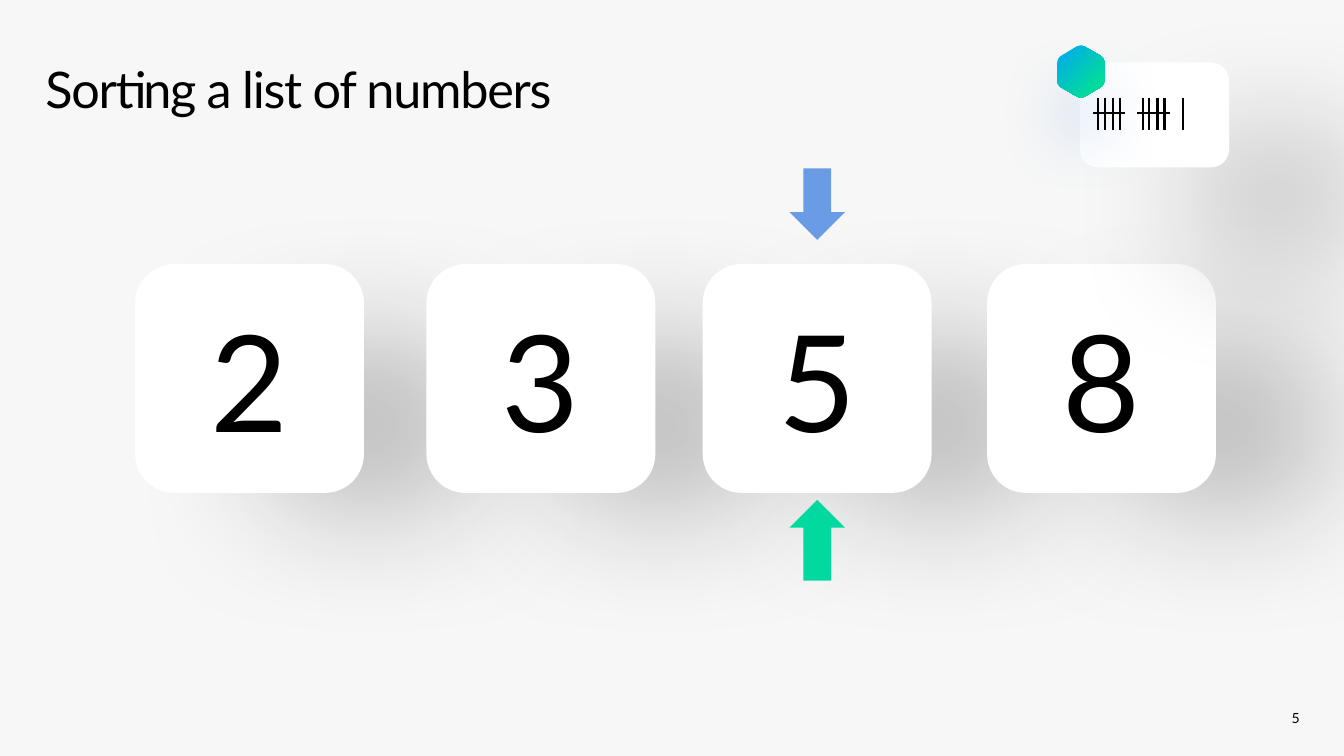
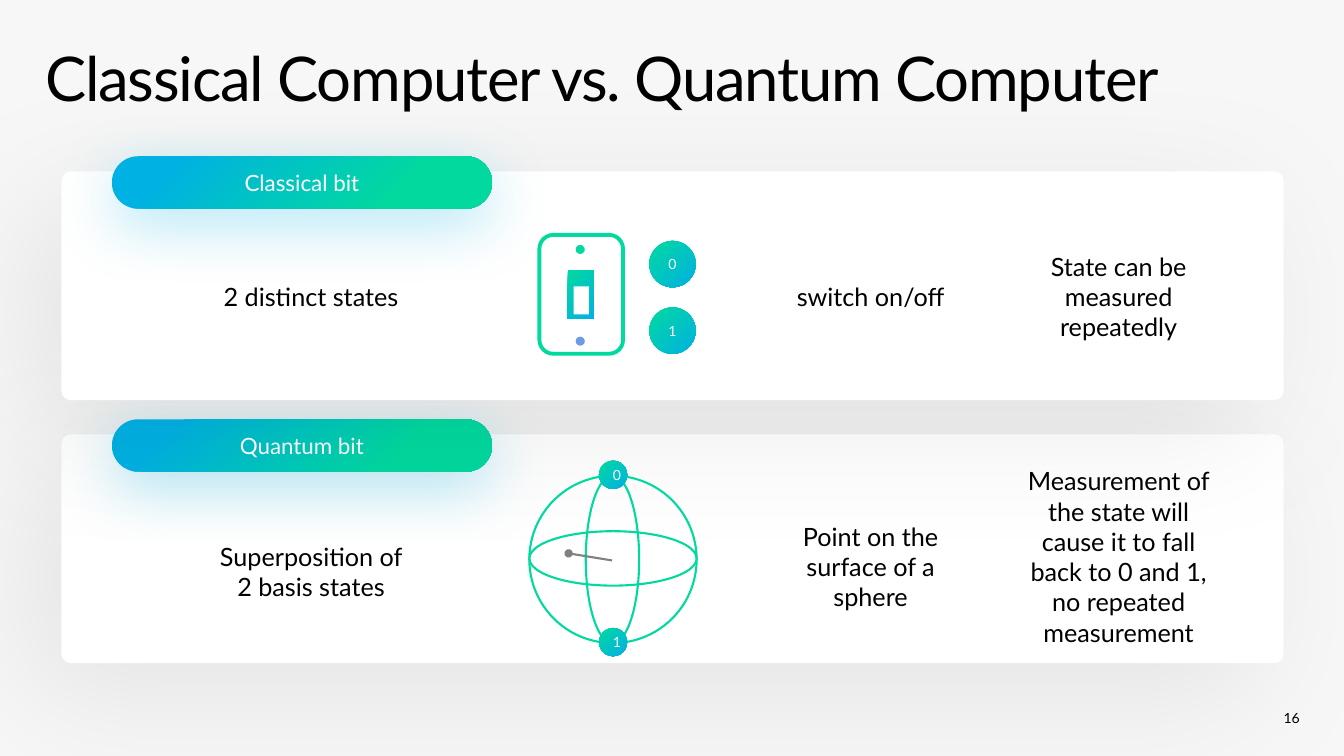
"""Build two slides: sorting a list of numbers, and classical versus quantum bits."""
import math

import lxml.etree
import pptx
import pptx.dml.color
import pptx.enum.shapes
import pptx.enum.text
import pptx.oxml.ns
import pptx.util

Inches = pptx.util.Inches
Pt = pptx.util.Pt
RGBColor = pptx.dml.color.RGBColor
Shape = pptx.enum.shapes.MSO_SHAPE
Align = pptx.enum.text.PP_ALIGN
Anchor = pptx.enum.text.MSO_ANCHOR
qn = pptx.oxml.ns.qn

BLACK = RGBColor(0x00, 0x00, 0x00)
NEAR_BLACK = RGBColor(0x0D, 0x0D, 0x0D)
WHITE = RGBColor(0xFF, 0xFF, 0xFF)
PAGE = RGBColor(0xF7, 0xF7, 0xF7)
GREY = RGBColor(0x80, 0x80, 0x80)
GREEN = RGBColor(0x02, 0xD9, 0x9F)
CYAN = RGBColor(0x00, 0xB1, 0xE3)
BLUE = RGBColor(0x69, 0x9C, 0xE5)
FONT = "Lato"

BADGE_GRADIENT = ((0.15, CYAN), (0.75, GREEN))
STATE_GRADIENT = ((0, GREEN), (1, CYAN))

NUMBER_SHADOW = (NEAR_BLACK, 27, 100, 104, 34)
PANEL_SHADOW = (BLACK, 8, 100, 31, 135)
PILL_SHADOW = (CYAN, 30, 45, 12, 90)
HEXAGON_SHADOW = (BLUE, 30, 45, 30, 90)


def add_block(slide, kind, box, fill=None, text="", size=18, color=BLACK, align=Align.CENTER,
              anchor=Anchor.MIDDLE, shadow=None, corner=None, outline=None, outline_width=1.5):
    """Add a preset shape, an outline from points, or a text box when kind is None."""
    if kind is None:
        shape = slide.shapes.add_textbox(*map(Inches, box))
    elif isinstance(kind, list):
        points = [(Inches(x), Inches(y)) for x, y in kind]
        builder = slide.shapes.build_freeform(*points[0])
        builder.add_line_segments(points[1:])
        shape = builder.convert_to_shape()
    else:
        shape = slide.shapes.add_shape(kind, *map(Inches, box))
    if kind is not None:
        shape.shadow.inherit = False
        if fill is None:
            shape.fill.background()
        elif isinstance(fill, RGBColor):
            shape.fill.solid()
            shape.fill.fore_color.rgb = fill
        else:
            shape.fill.gradient()
            shape.fill.gradient_angle = 315
            for stop, (position, stop_color) in zip(shape.fill.gradient_stops, fill):
                stop.position = position
                stop.color.rgb = stop_color
        if outline is None:
            shape.line.fill.background()
        else:
            shape.line.color.rgb = outline
            shape.line.width = Pt(outline_width)
    if corner is not None:
        shape.adjustments[0] = corner
    if shadow:
        shadow_color, opacity, blur, distance, angle = shadow
        effects = shape._element.spPr.find(qn("a:effectLst"))
        outer = lxml.etree.SubElement(
            effects, qn("a:outerShdw"), blurRad=str(int(Pt(blur))), dist=str(int(Pt(distance))),
            dir=str(angle * 60000), algn="ctr", rotWithShape="0")
        tint = lxml.etree.SubElement(outer, qn("a:srgbClr"), val=str(shadow_color))
        lxml.etree.SubElement(tint, qn("a:alpha"), val=str(opacity * 1000))
    if text:
        frame = shape.text_frame
        frame.word_wrap = True
        frame.vertical_anchor = anchor
        frame.text = text
        paragraph = frame.paragraphs[0]
        paragraph.alignment = align
        font = paragraph.runs[0].font
        font.name, font.size, font.color.rgb = FONT, Pt(size), color
    return shape


def add_line(slide, start, end, color):
    """Add a straight line without a shadow."""
    line = slide.shapes.add_connector(
        pptx.enum.shapes.MSO_CONNECTOR.STRAIGHT, *map(Inches, (*start, *end)))
    line.line.color.rgb = color
    line.line.width = Pt(1.5)
    lxml.etree.SubElement(line._element.spPr, qn("a:effectLst"))
    return line


presentation = pptx.Presentation()
presentation.slide_width = Inches(13.33)
presentation.slide_height = Inches(7.5)
background = presentation.slide_master.background.fill
background.solid()
background.fore_color.rgb = PAGE

slides = []
for title_text, title_size, title_top, page_number in (
    ("Sorting a list of numbers", 36, 0.4, "5"),
    ("Classical Computer vs. Quantum Computer", 44, 0.29, "16"),
):
    slide = presentation.slides.add_slide(presentation.slide_layouts[5])
    title = slide.shapes.title
    title.left, title.top = Inches(0.35), Inches(title_top)
    title.width, title.height = Inches(12.64), Inches(1.03)
    frame = title.text_frame
    frame.text = title_text
    frame.auto_size = pptx.enum.text.MSO_AUTO_SIZE.NONE
    frame.vertical_anchor = Anchor.MIDDLE
    paragraph = frame.paragraphs[0]
    paragraph.alignment = Align.LEFT
    paragraph.line_spacing = 0.9
    run = paragraph.runs[0]
    run.font.name, run.font.size, run.font.color.rgb = FONT, Pt(title_size), BLACK
    run._r.get_or_add_rPr().set("spc", "-90")
    add_block(slide, None, (9.99, 6.92, 3, 0.4), text=page_number, size=10, align=Align.RIGHT)
    slides.append(slide)
sorting_slide, bits_slide = slides

for number, left in (("2", 1.34), ("3", 4.23), ("5", 6.97), ("8", 9.79)):
    add_block(sorting_slide, Shape.ROUNDED_RECTANGLE, (left + 0.15, 2.62, 1.96, 1.57), WHITE,
              shadow=NUMBER_SHADOW, corner=0.17)
    add_block(sorting_slide, Shape.ROUNDED_RECTANGLE, (left, 2.62, 2.27, 2.27), WHITE,
              text=number, size=96, corner=0.17)
add_block(sorting_slide, Shape.DOWN_ARROW, (7.83, 1.67, 0.55, 0.71), BLUE)
add_block(sorting_slide, Shape.UP_ARROW, (7.83, 4.96, 0.55, 0.8), GREEN)

add_block(sorting_slide, Shape.ROUNDED_RECTANGLE, (10.71, 0.62, 1.48, 1.04), WHITE,
          shadow=NUMBER_SHADOW, corner=0.17)
corners = [(10.72 + 0.27 * math.sin(math.radians(angle)),
            0.71 - 0.27 * math.cos(math.radians(angle))) for angle in range(0, 360, 60)]
hexagon = []
for index, corner in enumerate(corners):
    before, after = corners[index - 1], corners[(index + 1) % 6]
    for step in range(7):
        t = step / 6
        hexagon.append(tuple(
            c + 0.2 * ((1 - t) ** 2 * (b - c) + t ** 2 * (a - c))
            for b, c, a in zip(before, corner, after)))
add_block(sorting_slide, hexagon, None, BADGE_GRADIENT, shadow=HEXAGON_SHADOW)

for x in (10.89, 10.96, 11.04, 11.11, 11.34, 11.4, 11.48, 11.55, 11.73):
    add_line(sorting_slide, (x, 0.97), (x, 1.29), BLACK)
for x in (10.84, 11.28):
    add_line(sorting_slide, (x, 1.12), (x + 0.32, 1.12), BLACK)

rows = (
    (4.31, "Quantum bit", (
        ("Superposition of 2 basis states", 5.32, 0.71),
        ("Point on the surface of a sphere", 5.12, 1.01),
        ("Measurement of the state will cause it to fall back to 0 and 1, no repeated measurement",
         4.57, 1.92))),
    (1.7, "Classical bit", (
        ("2 distinct states", 2.74, 0.4),
        ("switch on/off", 2.74, 0.4),
        ("State can be measured repeatedly", 2.44, 1.01))),
)
for panel_top, label, captions in rows:
    add_block(bits_slide, Shape.ROUNDED_RECTANGLE, (0.61, panel_top, 12.12, 2.27), WHITE,
              shadow=PANEL_SHADOW, corner=0.04)
    add_block(bits_slide, Shape.ROUNDED_RECTANGLE, (1.11, panel_top - 0.15, 3.77, 0.52),
              BADGE_GRADIENT, text=label, size=16, color=WHITE, shadow=PILL_SHADOW, corner=0.5)
    for left, (caption, top, height) in zip((2.02, 7.57, 10.03), captions):
        add_block(bits_slide, None, (left, top, 2.13, height), text=caption, anchor=Anchor.TOP)

for sphere_ring in ((5.25, 4.72, 1.66, 1.66), (5.81, 4.72, 0.53, 1.66), (5.25, 5.27, 1.66, 0.54)):
    add_block(bits_slide, Shape.OVAL, sphere_ring, outline=GREEN)
pointer = add_line(bits_slide, (6.07, 5.56), (5.64, 5.49), GREY)
lxml.etree.SubElement(pointer.line._get_or_add_ln(), qn("a:tailEnd"), type="oval")

for state, left, top, diameter in (
    ("0", 5.94, 4.57, 0.28), ("1", 5.94, 6.23, 0.28),
    ("0", 6.44, 2.39, 0.46), ("1", 6.44, 3.05, 0.46),
):
    add_block(bits_slide, Shape.OVAL, (left, top, diameter, diameter), STATE_GRADIENT,
              text=state, size=10, color=WHITE)

add_block(bits_slide, Shape.ROUNDED_RECTANGLE, (5.35, 2.33, 0.83, 1.18),
          outline=GREEN, outline_width=2.75)
for kind, box, fill in (
    (Shape.OVAL, (5.71, 2.43, 0.09, 0.09), GREEN),
    (Shape.OVAL, (5.71, 3.34, 0.09, 0.09), BLUE),
    (Shape.RECTANGLE, (5.63, 2.68, 0.26, 0.48), STATE_GRADIENT),
    (Shape.RECTANGLE, (5.69, 2.84, 0.15, 0.28), WHITE),
):
    add_block(bits_slide, kind, box, fill)

presentation.save("out.pptx")
